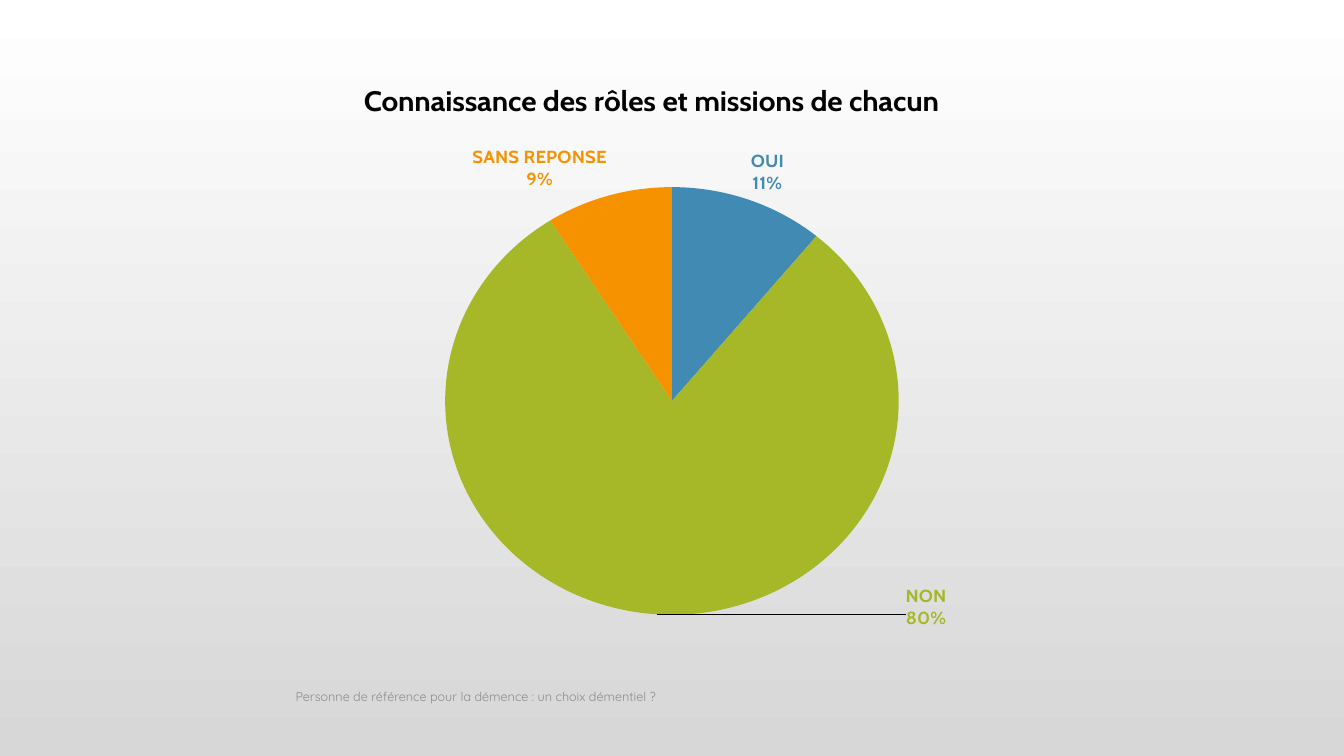
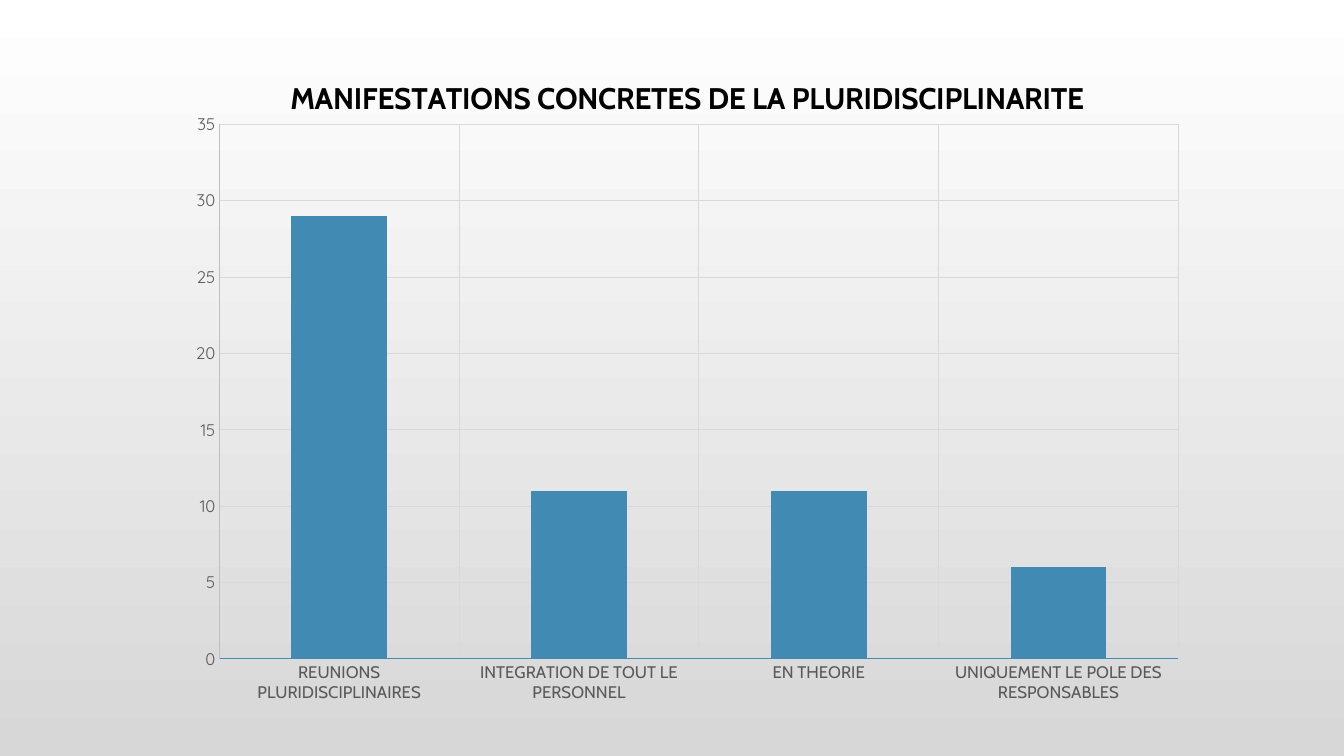
from lxml import etree
from pptx import Presentation
from pptx.chart.data import CategoryChartData
from pptx.dml.color import RGBColor
from pptx.enum import chart as ch, text
from pptx.oxml import ns
from pptx.util import Pt

COLORS = {
    "top": "FFFFFF", "bottom": "D7D7D7", "title": "000000", "footer": "8C8C8C",
    "axis_text": "595959", "axis_line": "BFBFBF", "grid": "D9D9D9",
    "blue": "418AB3", "green": "A6B727", "orange": "F69200",
}
HEAD, BODY = "Cabin", "Quicksand"


def rgb(name):
    return RGBColor.from_string(COLORS[name])


def set_font(font, color, size, name=BODY, bold=False):
    font.name, font.size, font.bold = name, Pt(size), bold
    font.color.rgb = rgb(color)


def set_line(line, color):
    line.color.rgb = rgb(color)
    line.width = Pt(0.75)


def manual_layout(x, y, w=None, h=None):
    """Layout element, in fractions of the chart; with w and h it is the inner plot area."""
    layout = etree.Element(ns.qn("c:layout"))
    box = etree.SubElement(layout, ns.qn("c:manualLayout"))
    values = {"x": x, "y": y}
    if w is not None:
        values = {"layoutTarget": "inner", "xMode": "edge", "yMode": "edge",
                  **values, "w": w, "h": h}
    for tag, value in values.items():
        etree.SubElement(box, ns.qn("c:" + tag)).set("val", str(value))
    return layout


def set_background(master):
    fill = master.background.fill
    fill.gradient()
    fill.gradient_angle = 270
    for stop, name, position in zip(fill.gradient_stops, ("top", "bottom"), (0, 1)):
        stop.color.rgb = rgb(name)
        stop.position = position


def add_text(slide, content, left, top, width, height, **font):
    tf = slide.shapes.add_textbox(Pt(left), Pt(top), Pt(width), Pt(height)).text_frame
    tf.word_wrap = True
    tf.vertical_anchor = text.MSO_ANCHOR.MIDDLE
    r = tf.paragraphs[0].add_run()
    r.text = content
    set_font(r.font, **font)


def add_chart(slide, kind, values, box, title, title_at, plot):
    data = CategoryChartData()
    data.categories = list(values)
    data.add_series("Series 1", list(values.values()))
    chart = slide.shapes.add_chart(kind, *map(Pt, box), data).chart
    chart.has_legend = False
    set_font(chart.font, "title", 10)
    tf = chart.chart_title.text_frame
    tf.text = title
    set_font(tf.paragraphs[0].runs[0].font, "title", 21.3, HEAD, True)
    chart.chart_title.include_in_layout = False

    title_layout = manual_layout(*title_at)
    for tag in ("yMode", "xMode"):
        mode = etree.Element(ns.qn("c:" + tag))
        mode.set("val", "edge")
        title_layout[0].insert(0, mode)
    title_el = chart.chart_title._element
    for old in title_el.findall(ns.qn("c:layout")):
        title_el.remove(old)
    title_el.find(ns.qn("c:tx")).addnext(title_layout)

    area = chart._chartSpace.chart.plotArea
    for old in area.findall(ns.qn("c:layout")):
        area.remove(old)
    area.insert(0, manual_layout(*plot))
    return chart


def color_slice(point, color, offset):
    """Fill a slice and label it with category and percentage."""
    point.format.fill.solid()
    point.format.fill.fore_color.rgb = rgb(color)
    label = point.data_label
    set_font(label.font, color, 13.3, HEAD, True)
    label.position = ch.XL_LABEL_POSITION.OUTSIDE_END
    el = label._dLbl
    for tag, shown in (("showVal", "0"), ("showCatName", "1"), ("showPercent", "1")):
        el.find(ns.qn("c:" + tag)).set("val", shown)
    separator = etree.SubElement(el, ns.qn("c:separator"))
    separator.text = "\n"
    el.find(ns.qn("c:showBubbleSize")).addnext(separator)
    if offset:
        el.find(ns.qn("c:idx")).addnext(manual_layout(*offset))


def style_axis(axis, line, font):
    axis.major_tick_mark = axis.minor_tick_mark = ch.XL_TICK_MARK.NONE
    axis.has_major_gridlines = True
    set_line(axis.major_gridlines.format.line, "grid")
    set_line(axis.format.line, line)
    set_font(axis.tick_labels.font, "axis_text", 12, font)


def roles_slide(slide):
    chart = add_chart(
        slide, ch.XL_CHART_TYPE.PIE, {"OUI": 11, "NON": 80, "SANS REPONSE": 9},
        (160, 42, 640, 432), "Connaissance des rôles et missions de chacun",
        (0.15, 0.03), (0.08, 0.225, 0.84, 0.75))
    points = chart.plots[0].series[0].points
    slices = (("blue", None), ("green", (0.3, -0.05)), ("orange", None))
    for i, (color, offset) in enumerate(slices):
        color_slice(points[i], color, offset)
    add_text(slide, "Personne de référence pour la démence : un choix démentiel ?",
             204, 483, 600, 29, color="footer", size=9)


def practice_slide(slide):
    chart = add_chart(
        slide, ch.XL_CHART_TYPE.COLUMN_CLUSTERED,
        {"REUNIONS PLURIDISCIPLINAIRES": 29, "INTEGRATION DE TOUT LE PERSONNEL": 11,
         "EN THEORIE": 11, "UNIQUEMENT LE POLE DES RESPONSABLES": 6},
        (123, 32, 732, 482), "MANIFESTATIONS CONCRETES DE LA PLURIDISCIPLINARITE",
        (0.11, 0.04), (0.046, 0.118, 0.936, 0.792))
    plot = chart.plots[0]
    plot.gap_width = 150
    plot.vary_by_categories = False
    fill = plot.series[0].format.fill
    fill.solid()
    fill.fore_color.rgb = rgb("blue")
    style_axis(chart.category_axis, "blue", HEAD)
    style_axis(chart.value_axis, "axis_line", BODY)
    chart.value_axis.minimum_scale, chart.value_axis.maximum_scale = 0, 35
    chart.value_axis.major_unit = 5


def main():
    prs = Presentation()
    prs.slide_width, prs.slide_height = Pt(960), Pt(540)
    set_background(prs.slide_master)
    for build in (roles_slide, practice_slide):
        build(prs.slides.add_slide(prs.slide_layouts[6]))
    prs.save("out.pptx")


if __name__ == "__main__":
    main()
